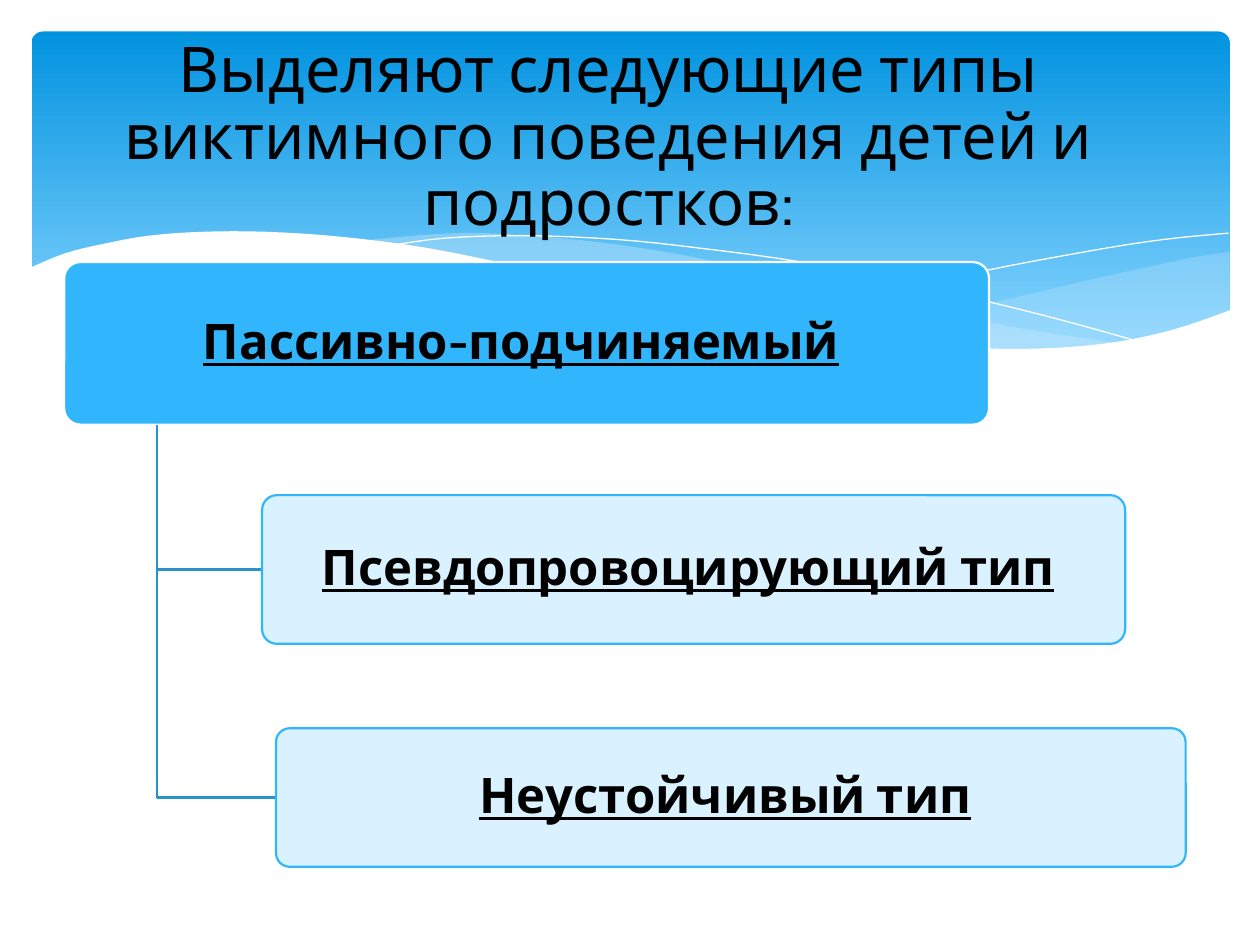
from lxml import etree
from pptx import Presentation
from pptx import util as u
from pptx.dml.color import RGBColor
from pptx.enum import shapes, text
from pptx.oxml import ns

# Grid: 100 columns by 75 rows of square cells
CELL = u.Inches(0.1)
COLS, ROWS = 100, 75
FONT = "Cabin"

BLACK = RGBColor(0x00, 0x00, 0x00)
WHITE = RGBColor(0xFF, 0xFF, 0xFF)
BAND_TOP = RGBColor(0x02, 0x93, 0xE0)
BAND_END = RGBColor(0x83, 0xD3, 0xFE)
MIST = RGBColor(0xC6, 0xE7, 0xFC)
BLUE = RGBColor(0x31, 0xB6, 0xFD)
PALE = RGBColor(0xD6, 0xF0, 0xFF)
BRANCH = RGBColor(0x27, 0x92, 0xCB)

# Wave edges, in cells from the corner of the wave region
RIGHT_SWELL = [
    [(95.3, 1.6), (92.5, 2), (88.3, 2.9), (83.8, 3.9), (75.6, 5.8), (63.8, 8.1)],
    [(63.8, 8.1), (69.6, 8.7), (75.8, 9.3), (81.2, 9.3), (86.6, 8.8),
     (91.2, 7.8), (95.3, 6.3)],
]
MIDDLE_SWELL = [
    [(87, 8.9), (78.4, 7.6), (68.3, 5.6), (60.6, 3.8), (53.2, 2.1),
     (46.6, 1), (39.7, 0.3), (33.8, 0.1), (26.3, 0.7)],
    [(26.3, 0.7), (31.9, 1.5), (38.1, 2.7), (46.8, 4.8), (57.8, 7.1),
     (67.2, 8.6), (75, 9.3), (81.5, 9.4), (87, 8.9)],
]
FALLING_LINE = [
    [(28.6, 1.1), (33, 0.5), (39.3, 0.3), (46.6, 0.6), (53.3, 1.3),
     (61.3, 2.4), (70.4, 4.2), (80.8, 6.7), (88.4, 8.8)],
]
RISING_LINE = [
    [(59, 7.3), (67.2, 5.1), (75.3, 3.2), (84.3, 1.5), (90.1, 0.6), (95.2, 0.1)],
]
WHITE_SWELL = [
    [(95.4, 6.2), (90.7, 7.8), (85.2, 8.9), (78.6, 9.3), (72.1, 9),
     (64.5, 8.1), (55.6, 6.6), (48, 4.9), (39.5, 2.9), (31.7, 1.3),
     (24.8, 0.4), (18.8, 0), (13.8, 0), (9.6, 0.3), (6.2, 0.9),
     (2.9, 1.7), (0, 2.9)],
    [(0, 14.5), (95.4, 14.5)],
]


def cells(*values):
    return [u.Emu(round(value * CELL)) for value in values]


def smooth(knots, steps=4):
    """Catmull-Rom curve through the knots."""
    ends = [knots[0], *knots, knots[-1]]
    points = [knots[0]]
    for a, b, c, d in zip(ends, ends[1:], ends[2:], ends[3:]):
        for step in range(1, steps + 1):
            t = step / steps
            points.append(tuple(
                (2 * q + (r - p) * t + (2 * p - 5 * q + 4 * r - s) * t ** 2
                 + (3 * q - p - 3 * r + s) * t ** 3) / 2
                for p, q, r, s in zip(a, b, c, d)))
    return points


def paint(shape, fill=None, alpha=100, line=None, width=1.25):
    shape.shadow.inherit = False
    if fill is None:
        shape.fill.background()
    else:
        shape.fill.solid()
        shape.fill.fore_color.rgb = fill
        if alpha < 100:
            color = shape.fill._xPr.find(".//" + ns.qn("a:srgbClr"))
            etree.SubElement(color, ns.qn("a:alpha")).set("val", str(alpha * 1000))
    if line is None:
        shape.line.fill.background()
    else:
        shape.line.color.rgb = line
        shape.line.width = u.Pt(width)


def add_outline(page, points, close):
    start, *rest = [cells(*point) for point in points]
    builder = page.shapes.build_freeform(*start)
    builder.add_line_segments(rest, close=close)
    return builder.convert_to_shape()


def add_round_box(page, box, rounding):
    shape = page.shapes.add_shape(
        shapes.MSO_SHAPE.ROUNDED_RECTANGLE, *cells(*box))
    shape.adjustments[0] = rounding
    return shape


def add_span(para, words, size, **style):
    span = para.add_run()
    span.text = words
    span.font.name = FONT
    span.font.size = u.Pt(size)
    span.font.color.rgb = BLACK
    for name, value in style.items():
        setattr(span.font, name, value)


def draw_band(page, box):
    band = add_round_box(page, box, 0.034)
    paint(band)
    band.fill.gradient()
    band.fill.gradient_angle = 270
    stops = zip(band.fill.gradient_stops, (BAND_TOP, BAND_END), (0, 0.9))
    for stop, color, position in stops:
        stop.color.rgb = color
        stop.position = position


def draw_waves(page, box):
    left, top = box[:2]
    for curves, style in (
            (RIGHT_SWELL, {"fill": MIST, "alpha": 29}),
            (MIDDLE_SWELL, {"fill": MIST, "alpha": 40}),
            (FALLING_LINE, {"line": WHITE, "width": 0}),
            (RISING_LINE, {"line": WHITE, "width": 0}),
            (WHITE_SWELL, {"fill": WHITE})):
        points = [(left + x, top + y) for curve in curves for x, y in smooth(curve)]
        paint(add_outline(page, points, "fill" in style), **style)


def draw_type_box(page, box, words, **style):
    shape = add_round_box(page, box, 0.1)
    paint(shape, **style)
    frame = shape.text_frame
    frame.word_wrap = True
    frame.vertical_anchor = text.MSO_ANCHOR.MIDDLE
    frame.margin_left = frame.margin_right = u.Inches(0.06)
    frame.margin_top = frame.margin_bottom = u.Inches(0.04)
    para = frame.paragraphs[0]
    para.alignment = text.PP_ALIGN.CENTER
    para.line_spacing = 0.9
    add_span(para, words, 28, bold=True, underline=True)
    add_span(para, " ", 28, bold=True)


def draw_hierarchy(page, box):
    left, top = box[:2]
    parent_width, parent_height = 73.4, 12.9
    draw_type_box(page, (left, top, parent_width, parent_height),
                  "Пассивно-подчиняемый", fill=BLUE, line=WHITE)
    # Branches drop from one tenth of the parent's width
    trunk, base = left + parent_width / 10, top + parent_height
    for words, (x, y, width, height), alpha in (
            ("Псевдопровоцирующий тип", (15.7, 18.5, 68.5, 11.8), 89),
            ("Неустойчивый тип", (16.8, 37, 72.2, 11), 90)):
        child = (left + x, top + y, width, height)
        middle = child[1] + height / 2
        elbow = [(trunk, base), (trunk, middle), (child[0], middle)]
        paint(add_outline(page, elbow, False), line=BRANCH)
        draw_type_box(page, child, words, fill=PALE, alpha=alpha, line=BLUE)


def place_title(page, box):
    title = page.shapes.title
    title.left, title.top, title.width, title.height = cells(*box)
    frame = title.text_frame
    frame.word_wrap = True
    frame.auto_size = text.MSO_AUTO_SIZE.NONE
    frame.vertical_anchor = text.MSO_ANCHOR.MIDDLE
    para = frame.paragraphs[0]
    para.alignment = text.PP_ALIGN.CENTER
    para.line_spacing = 0.88
    add_span(para, "Выделяют следующие типы виктимного поведения детей и подростков:", 36)
    # Bring the title in front of the band
    title.element.getparent().append(title.element)


def main():
    deck = Presentation()
    deck.slide_width, deck.slide_height = cells(COLS, ROWS)
    page = deck.slides.add_slide(deck.slide_layouts.get_by_name("Title Only"))
    draw_band(page, (2.5, 2.5, 95.1, 27))
    draw_waves(page, (2.3, 18.4, 95.4, 14.5))
    draw_hierarchy(page, (5.1, 20.8, 89, 48))
    place_title(page, (3.3, 4.2, 90, 13.7))
    deck.save("out.pptx")


if __name__ == "__main__":
    main()
